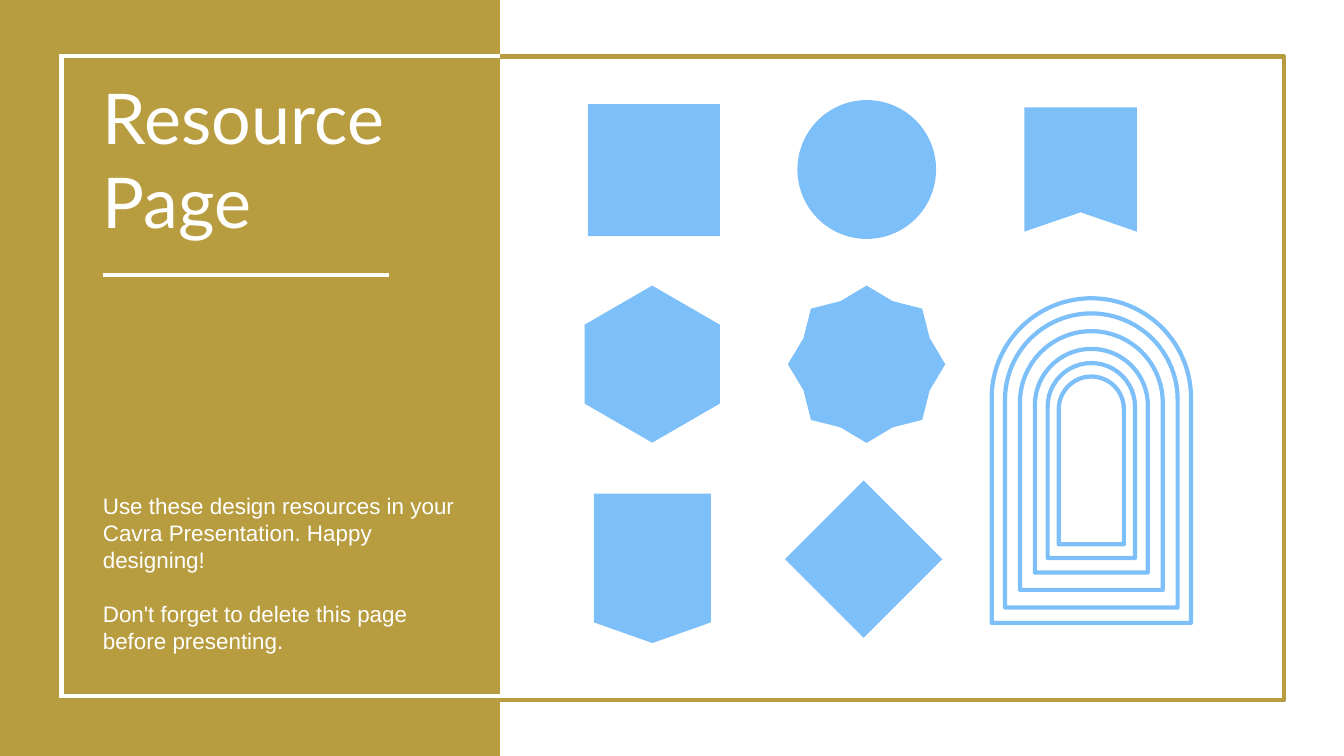
"""Build the resource page slide: a gold title panel beside a set of blue shapes."""
from lxml import etree
from pptx import Presentation
from pptx import util as u
from pptx.dml import color
from pptx.enum import shapes, text
from pptx.oxml import ns

COLORS = {"gold": "B89D40", "blue": "7DBFF8", "white": "FFFFFF"}
PRESET = shapes.MSO_SHAPE


def paint(shape, fill=None, line=None):
    shape.shadow.inherit = False
    if fill:
        shape.fill.solid()
        shape.fill.fore_color.rgb = color.RGBColor.from_string(COLORS[fill])
    else:
        shape.fill.background()
    if line:
        shape.line.color.rgb = color.RGBColor.from_string(COLORS[line])
        shape.line.width = u.Pt(4.5)
    else:
        shape.line.fill.background()


def write(shape, box, lines, font_name, size, gap):
    shape.left, shape.top, shape.width, shape.height = map(u.Pt, box)
    frame = shape.text_frame
    frame.margin_left = frame.margin_top = frame.margin_right = frame.margin_bottom = 0
    frame.word_wrap = True
    frame.auto_size = text.MSO_AUTO_SIZE.NONE
    frame.vertical_anchor = text.MSO_ANCHOR.TOP
    frame.text = "\n".join(lines)
    for index, paragraph in enumerate(frame.paragraphs):
        paragraph.alignment = text.PP_ALIGN.LEFT
        paragraph.line_spacing = u.Pt(size * 1.2)
        paragraph.space_before = u.Pt(gap if index else 0)
        paragraph.font.name = font_name
        paragraph.font.size = u.Pt(size)
        paragraph.font.color.rgb = color.RGBColor.from_string(COLORS["white"])


presentation = Presentation()
presentation.slide_width = u.Pt(1440)
presentation.slide_height = u.Pt(810)
slide = presentation.slides.add_slide(presentation.slide_layouts[5])
tree = slide.shapes

panel = tree.add_shape(PRESET.RECTANGLE, 0, 0, u.Pt(535.7), u.Pt(810))
paint(panel, fill="gold")
frame_border = tree.add_shape(PRESET.RECTANGLE, u.Pt(63.4), u.Pt(60.5), u.Pt(1312.5), u.Pt(689.8))
paint(frame_border, line="gold")

title = tree.title
tree._spTree.append(title._element)
write(title, (110.2, 79.9, 398.2, 181.4), ["Resource", "Page"], "Lato", 75, 0)
body = tree.add_textbox(0, 0, 0, 0)
write(body, (110.2, 527.4, 398.2, 174.2), [
    "Use these design resources in your Cavra Presentation. Happy designing!",
    "Don't forget to delete this page before presenting.",
], "Arial", 24, 28.8)

white_lines = [
    (63.4, 59.8, 535.7, 59.8),
    (63.4, 745.9, 535.7, 745.9),
    (65.9, 743.8, 65.9, 61.9),
    (110.2, 294.9, 417.3, 294.9),
]
for ends in white_lines:
    line = tree.add_connector(shapes.MSO_CONNECTOR.STRAIGHT, *map(u.Pt, ends))
    line.line.color.rgb = color.RGBColor.from_string(COLORS["white"])
    line.line.width = u.Pt(4.5)
    etree.SubElement(line._element.spPr, ns.qn("a:effectLst"))

presets = [
    (PRESET.RECTANGLE, 630, 111.6, 141.4, 141.4),
    (PRESET.OVAL, 854.4, 107.2, 148.6, 148.8),
    (PRESET.STAR_8_POINT, 844.2, 306, 168.6, 168.6),
    (PRESET.DIAMOND, 841, 514.8, 168.6, 168.6),
]
for preset, *box in presets:
    shape = tree.add_shape(preset, *map(u.Pt, box))
    paint(shape, fill="blue")
    if preset == PRESET.STAR_8_POINT:
        shape.adjustments[0] = 0.434

hexagon = [(698.8, 306), (771.3, 347.9), (771.3, 432.4),
           (698.8, 474.3), (626.4, 432.4), (626.4, 347.9)]
banner = [(1097.5, 115.2), (1218.1, 115.2), (1218.1, 248.2),
          (1157.8, 227.5), (1097.5, 248.2)]
shield = [(636.4, 529), (761.6, 529), (761.6, 666.9),
          (699, 689), (636.4, 666.9)]
for outline in (hexagon, banner, shield):
    start, *rest = [(u.Pt(x), u.Pt(y)) for x, y in outline]
    builder = tree.build_freeform(*start)
    builder.add_line_segments(rest, close=True)
    paint(builder.convert_to_shape(), fill="blue")

arch_center = 1169.3
arches = [
    (213.6, 319.6, 667.4),
    (185, 335.8, 651),
    (153, 354.8, 632),
    (121, 373.8, 613.4),
    (93.6, 389, 597.8),
    (69.8, 403.4, 583.2),
]
for width, top, bottom in arches:
    arch = tree.add_shape(PRESET.ROUND_2_SAME_RECTANGLE, u.Pt(arch_center - width / 2),
                          u.Pt(top), u.Pt(width), u.Pt(bottom - top))
    arch.adjustments[0] = 0.5
    paint(arch, line="blue")

presentation.save("out.pptx")
